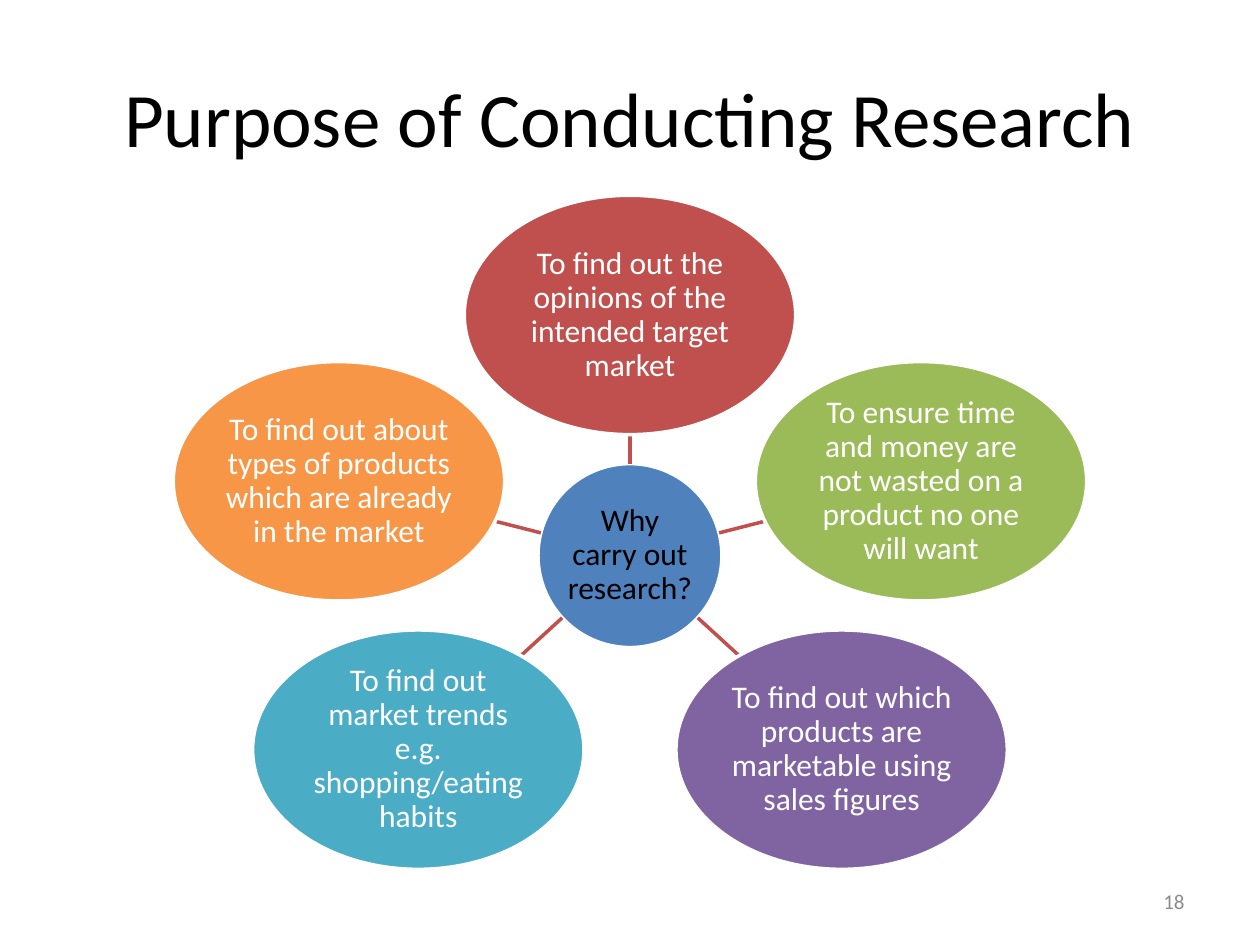
import math
from lxml import etree
from pptx import Presentation, util as u
from pptx.dml.color import RGBColor
from pptx.enum import shapes, text
from pptx.oxml.ns import qn

FONT = "Calibri"
HUB_DIAMETER = 1.46
PETAL_WIDTH, PETAL_HEIGHT = 2.63, 1.9
# Petal text, fill and centre offset from the hub, clockwise from the top
PETALS = [
    ("To find out the opinions of the intended target market", "C0504D", 0, -1.91),
    ("To ensure time and money are not wasted on a product no one will want",
     "9BBB59", 2.31, -0.59),
    ("To find out which products are marketable using sales figures",
     "8064A2", 1.68, 1.54),
    ("To find out market trends e.g. shopping/eating habits", "4BACC6", -1.68, 1.54),
    ("To find out about types of products which are already in the market",
     "F79646", -2.31, -0.59),
]


def color(value):
    return RGBColor.from_string(value)


def write(shape, words, size, font_color, align, inset=None, spacing=None):
    frame = shape.text_frame
    frame.word_wrap = True
    frame.vertical_anchor = text.MSO_ANCHOR.MIDDLE
    if inset is not None:
        frame.margin_left = frame.margin_right = u.Inches(inset)
        frame.margin_top = frame.margin_bottom = u.Inches(inset)
    paragraph = frame.paragraphs[0]
    paragraph.alignment = align
    if spacing:
        paragraph.line_spacing = spacing
    run = paragraph.add_run()
    run.text = words
    run.font.name = FONT
    run.font.size = u.Pt(size)
    run.font.color.rgb = color(font_color)


def add_label(slide, box, words, size, font_color, align):
    label = slide.shapes.add_textbox(*(u.Inches(length) for length in box))
    write(label, words, size, font_color, align)


def add_oval(slide, center_x, center_y, width, height, words, fill, font_color):
    box = (center_x - width / 2, center_y - height / 2, width, height)
    oval = slide.shapes.add_shape(
        shapes.MSO_SHAPE.OVAL, *(u.Inches(length) for length in box))
    oval.shadow.inherit = False
    oval.fill.solid()
    oval.fill.fore_color.rgb = color(fill)
    oval.line.color.rgb = color("FFFFFF")
    oval.line.width = u.Pt(2)
    write(oval, words, 18, font_color, text.PP_ALIGN.CENTER, inset=0.01, spacing=0.9)


def add_spoke(slide, hub_x, hub_y, dx, dy):
    """Join the hub's edge to the petal's edge along the line between centres."""
    distance = math.hypot(dx, dy)
    unit_x, unit_y = dx / distance, dy / distance
    petal_radius = 1 / math.hypot(unit_x / (PETAL_WIDTH / 2), unit_y / (PETAL_HEIGHT / 2))
    ends = []
    for reach in (HUB_DIAMETER / 2, distance - petal_radius):
        ends += [u.Inches(hub_x + reach * unit_x), u.Inches(hub_y + reach * unit_y)]
    spoke = slide.shapes.add_connector(shapes.MSO_CONNECTOR.STRAIGHT, *ends)
    spoke.line.color.rgb = color("C0504D")
    spoke.line.width = u.Pt(2)
    etree.SubElement(spoke._element.spPr, qn("a:effectLst"))


def add_radial_diagram(slide, left, top, width):
    hub_x = left + width / 2
    hub_y = top + PETAL_HEIGHT / 2 - PETALS[0][3]
    add_oval(slide, hub_x, hub_y, HUB_DIAMETER, HUB_DIAMETER,
             "Why carry out research?", "4F81BD", "000000")
    for words, fill, dx, dy in PETALS:
        add_spoke(slide, hub_x, hub_y, dx, dy)
        add_oval(slide, hub_x + dx, hub_y + dy, PETAL_WIDTH, PETAL_HEIGHT,
                 words, fill, "FFFFFF")


def main():
    presentation = Presentation()
    presentation.slide_width = u.Inches(10)
    presentation.slide_height = u.Inches(7.5)
    slide = presentation.slides.add_slide(presentation.slide_layouts[6])
    add_label(slide, (0.5, 0.3, 9, 1.25), "Purpose of Conducting Research",
              44, "000000", text.PP_ALIGN.CENTER)
    add_radial_diagram(slide, 0.5, 1.55, 9)
    add_label(slide, (7.17, 6.95, 2.33, 0.4), "18", 12, "8C8C8C", text.PP_ALIGN.RIGHT)
    presentation.save("out.pptx")


if __name__ == "__main__":
    main()
